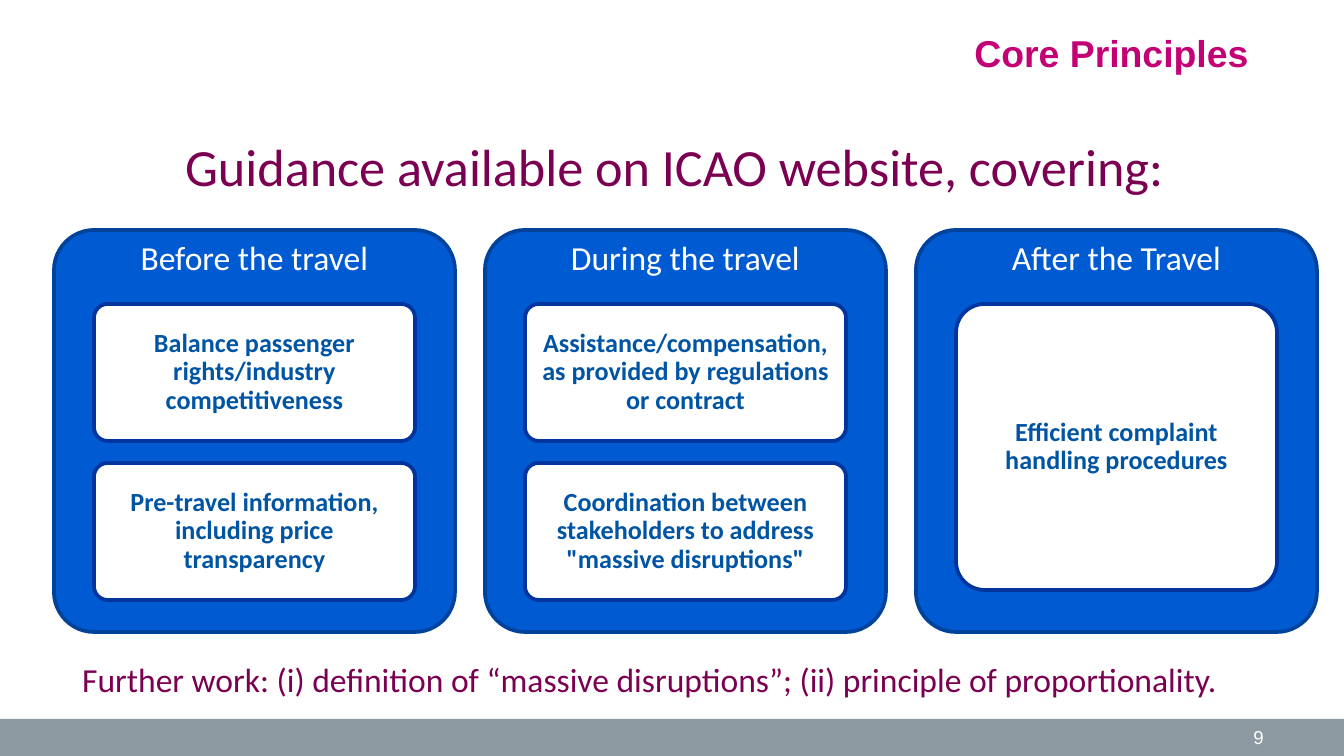
from pptx import Presentation
from pptx.dml.color import RGBColor
from pptx.enum.shapes import MSO_SHAPE
from pptx.enum.text import MSO_ANCHOR, PP_ALIGN
from pptx.util import Pt

# Content
TITLE = "Guidance available on ICAO website, covering:"
TAG = "Core Principles"
NOTE = "Further work: (i) definition of “massive disruptions”; (ii) principle of proportionality."
PAGE = "9"
CARDS = [
    ("Before the travel", [
        "Balance passenger rights/industry competitiveness",
        "Pre-travel information, including price transparency",
    ]),
    ("During the travel", [
        "Assistance/compensation, as provided by regulations or contract",
        "Coordination between stakeholders to address \"massive disruptions\"",
    ]),
    ("After the Travel", ["Efficient complaint handling procedures"]),
]

# Colours
WHITE = RGBColor(0xFF, 0xFF, 0xFF)
GREY = RGBColor(0x8C, 0x99, 0xA1)
PLUM = RGBColor(0x7B, 0x00, 0x52)
PINK = RGBColor(0xC4, 0x00, 0x75)
BLUE = RGBColor(0x00, 0x5B, 0xD3)
EDGE = RGBColor(0x00, 0x43, 0x9C)
NAVY = RGBColor(0x00, 0x34, 0x9E)
INK = RGBColor(0x00, 0x54, 0xA4)

# Layout in px
WIDE, HIGH = 1344, 756
BAR_TOP = 719
CARD_X, CARD_Y, CARD_W, CARD_H, CARD_STEP = 54, 230, 401, 402, 431
ITEM_DX, ITEM_DY, ITEM_W, ITEM_STEP = 40, 74, 321, 159
ITEM_H = {1: 286, 2: 137}  # height by number of items in the card
PAD = 8


def px(n):
    return round(n * 914400 / 134.4)


def write(shape, text, size, color, align, anchor, font="Calibri", bold=False):
    frame = shape.text_frame
    frame.word_wrap = True
    frame.vertical_anchor = anchor
    frame.text = text
    para = frame.paragraphs[0]
    para.alignment = align
    para.font.name = font
    para.font.size = Pt(size)
    para.font.bold = bold
    para.font.color.rgb = color
    return frame


def label(box, *style, **more):
    return write(slide.shapes.add_textbox(*map(px, box)), *style, **more)


def block(kind, box, fill, line=None):
    shape = slide.shapes.add_shape(kind, *map(px, box))
    shape.shadow.inherit = False
    shape.fill.solid()
    shape.fill.fore_color.rgb = fill
    if line is None:
        shape.line.fill.background()
    else:
        shape.line.color.rgb = line
        shape.line.width = Pt(2)
    return shape


def panel(box, fill, line, pad, *style, **more):
    shape = block(MSO_SHAPE.ROUNDED_RECTANGLE, box, fill, line)
    shape.adjustments[0] = 0.1
    frame = write(shape, *style, **more)
    frame.margin_left = frame.margin_right = px(PAD)
    frame.margin_top = frame.margin_bottom = px(pad)
    frame.paragraphs[0].line_spacing = 0.9


deck = Presentation()
deck.slide_width, deck.slide_height = px(WIDE), px(HIGH)
slide = deck.slides.add_slide(deck.slide_layouts[5])

# Footer bar and page number
block(MSO_SHAPE.RECTANGLE, (0, BAR_TOP, WIDE, HIGH - BAR_TOP), GREY)
label((964, BAR_TOP, 313, HIGH - BAR_TOP), PAGE, 10, WHITE,
      PP_ALIGN.RIGHT, MSO_ANCHOR.MIDDLE, font="Arial")

# Title, section tag and closing note
title = slide.shapes.title
title.left, title.top, title.width, title.height = map(px, (69, 124, 1210, 84))
write(title, TITLE, 28, PLUM, PP_ALIGN.CENTER, MSO_ANCHOR.MIDDLE)
label((634, 0, 628, 106), TAG, 20, PINK,
      PP_ALIGN.RIGHT, MSO_ANCHOR.MIDDLE, font="Arial", bold=True)
label((69, 652, 1250, 54), NOTE, 18, PLUM, PP_ALIGN.LEFT, MSO_ANCHOR.TOP)

# Cards with their items
for col, (head, items) in enumerate(CARDS):
    left = CARD_X + col * CARD_STEP
    panel((left, CARD_Y, CARD_W, CARD_H), BLUE, EDGE, 0,
          head, 18, WHITE, PP_ALIGN.CENTER, MSO_ANCHOR.TOP)
    for row, item in enumerate(items):
        top = CARD_Y + ITEM_DY + row * ITEM_STEP
        panel((left + ITEM_DX, top, ITEM_W, ITEM_H[len(items)]), WHITE, NAVY, PAD,
              item, 14, INK, PP_ALIGN.CENTER, MSO_ANCHOR.MIDDLE, bold=True)

deck.save("out.pptx")
